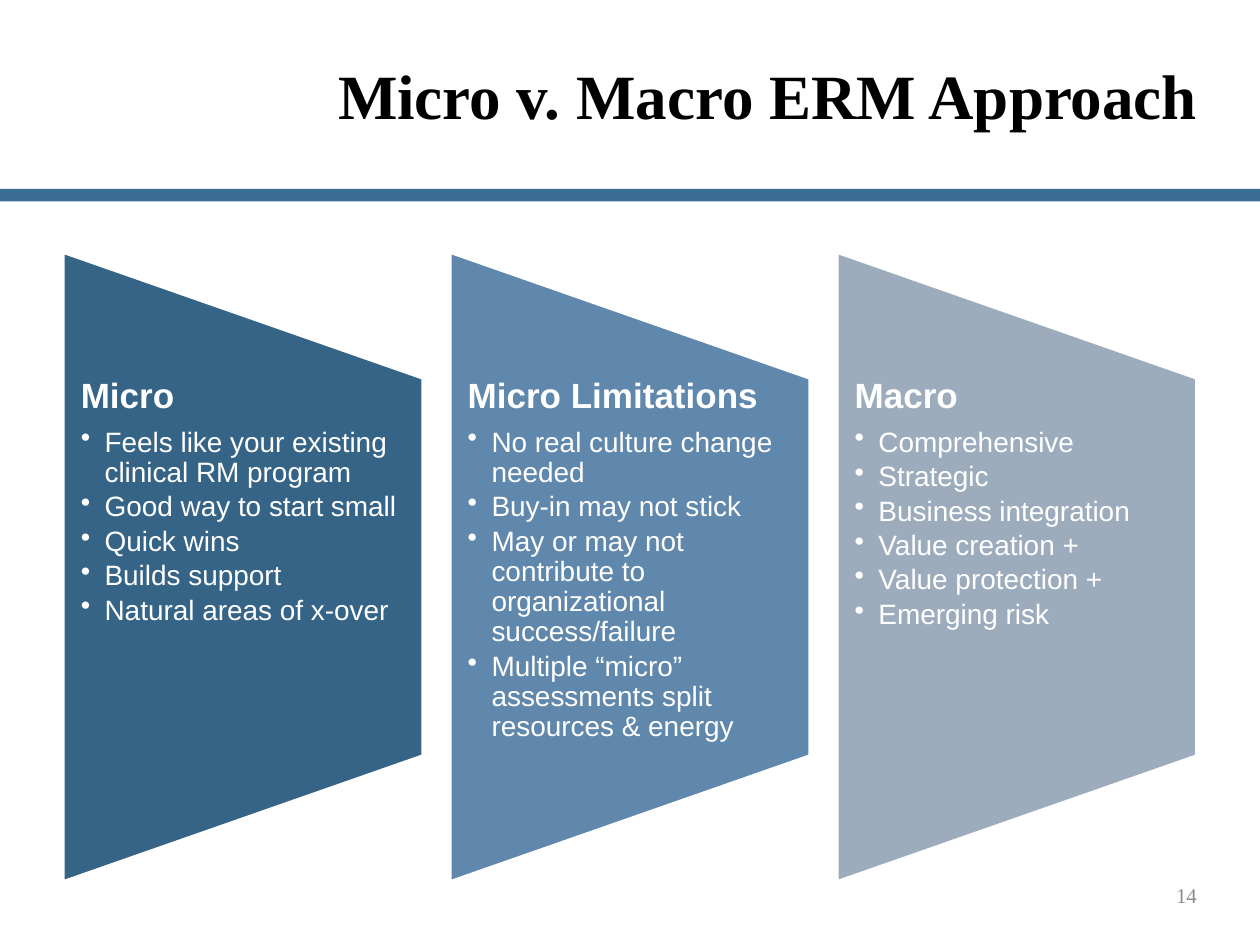
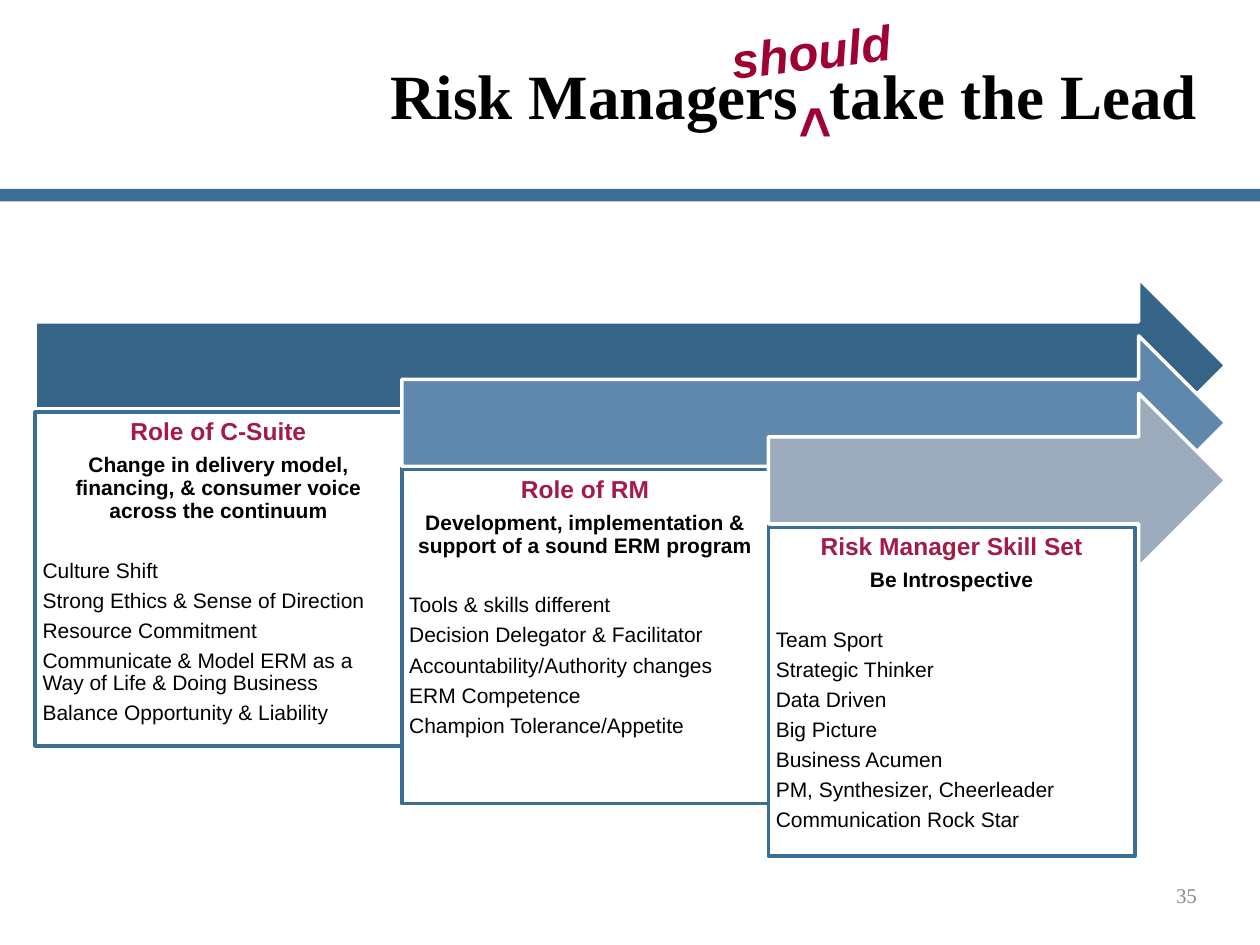
from lxml.etree import SubElement
from pptx import Presentation
from pptx.dml.color import RGBColor
from pptx.enum.shapes import MSO_SHAPE
from pptx.enum.text import MSO_ANCHOR, MSO_AUTO_SIZE, PP_ALIGN
from pptx.oxml.ns import qn
from pptx.util import Cm, Pt

BLUE = RGBColor(0x3B, 0x6E, 0x95)
SERIES = (
    RGBColor(0x36, 0x64, 0x87),
    RGBColor(0x60, 0x87, 0xAC),
    RGBColor(0x9D, 0xAC, 0xBD),
)
WHITE = RGBColor(0xFF, 0xFF, 0xFF)
BLACK = RGBColor(0, 0, 0)
GREY = RGBColor(0x8C, 0x8C, 0x8C)
RED = RGBColor(0xA2, 0x1C, 0x45)
CRIMSON = RGBColor(0xA0, 0x01, 0x33)
SANS = "Arial"
SERIF = "Times New Roman"

APPROACHES = [
    ("Micro", [
        "Feels like your existing clinical RM program",
        "Good way to start small",
        "Quick wins",
        "Builds support",
        "Natural areas of x-over",
    ]),
    ("Micro Limitations", [
        "No real culture change needed",
        "Buy-in may not stick",
        "May or may not contribute to organizational success/failure",
        "Multiple “micro” assessments split resources & energy",
    ]),
    ("Macro", [
        "Comprehensive",
        "Strategic",
        "Business integration",
        "Value creation +",
        "Value protection +",
        "Emerging risk",
    ]),
]

ROLES = [
    ("Role of C-Suite",
     "Change in delivery model, financing, & consumer voice across the continuum",
     6.73, [
         "Culture Shift",
         "Strong Ethics & Sense of Direction",
         "Resource Commitment",
         "Communicate & Model ERM as a Way of Life & Doing Business",
         "Balance Opportunity & Liability",
     ]),
    ("Role of RM",
     "Development, implementation & support of a sound ERM program",
     6.73, [
         "Tools & skills different",
         "Decision Delegator & Facilitator",
         "Accountability/Authority changes",
         "ERM Competence",
         "Champion Tolerance/Appetite",
     ]),
    ("Risk Manager Skill Set", "Be Introspective", 6.63, [
        "Team Sport",
        "Strategic Thinker",
        "Data Driven",
        "Big Picture",
        "Business Acumen",
        "PM, Synthesizer, Cheerleader",
        "Communication Rock Star",
    ]),
]


def write(p, text, size=12, color=BLACK, font=SANS, bold=False, italic=False,
          align=PP_ALIGN.LEFT, line=None, after=0, bullet=False, tracking=0):
    p.alignment = align
    p.space_before = Pt(0)
    p.space_after = Pt(after)
    if line:
        p.line_spacing = line
    if bullet:
        pPr = p._p.get_or_add_pPr()
        pPr.set("marL", str(Cm(0.48)))
        pPr.set("indent", str(Cm(-0.48)))
        SubElement(pPr, qn("a:buChar")).set("char", "•")
    r = p.add_run()
    r.text = text
    r.font.name = font
    r.font.size = Pt(size)
    r.font.bold = bold
    r.font.italic = italic
    r.font.color.rgb = color
    if tracking:
        r._r.get_or_add_rPr().set("spc", str(tracking * 100))


class Deck:
    def __init__(self):
        self.prs = Presentation()
        self.prs.slide_width = Cm(25.4)
        self.prs.slide_height = Cm(19.05)
        self.slide = None

    def new_slide(self, number):
        self.slide = self.prs.slides.add_slide(self.prs.slide_layouts[5])
        self.shape(MSO_SHAPE.RECTANGLE, 0, 3.81, 25.4, 0.25, BLUE)
        tf = self.text_box(21.84, 17.53, 2.54, 1.02, anchor=MSO_ANCHOR.MIDDLE)
        write(tf.paragraphs[0], number, color=GREY, font=SERIF, align=PP_ALIGN.RIGHT)

    def title(self, *parts):
        sp = self.slide.shapes.title
        sp.left, sp.top, sp.width, sp.height = Cm(6.1), Cm(0.64), Cm(18.29), Cm(2.54)
        tf = sp.text_frame
        tf.auto_size = MSO_AUTO_SIZE.NONE
        tf.vertical_anchor = MSO_ANCHOR.MIDDLE
        style = dict(size=36, font=SERIF, bold=True, align=PP_ALIGN.RIGHT)
        for i, part in enumerate(parts):
            if i:
                write(tf.paragraphs[0], " ", tracking=9, **style)
            write(tf.paragraphs[0], part, **style)

    def shape(self, kind, x, y, w, h, fill, line=None, rotation=0):
        sp = self.slide.shapes.add_shape(kind, Cm(x), Cm(y), Cm(w), Cm(h))
        sp.shadow.inherit = False
        sp.rotation = rotation
        sp.fill.solid()
        sp.fill.fore_color.rgb = fill
        if line is None:
            sp.line.fill.background()
        else:
            sp.line.color.rgb = line
            sp.line.width = Pt(2)
        return sp

    def text_box(self, x, y, w, h, anchor=MSO_ANCHOR.TOP, rotation=0):
        sp = self.slide.shapes.add_textbox(Cm(x), Cm(y), Cm(w), Cm(h))
        sp.rotation = rotation
        tf = sp.text_frame
        tf.word_wrap = True
        tf.vertical_anchor = anchor
        return tf

    def insets(self, tf, side, end):
        tf.margin_left = tf.margin_right = Cm(side)
        tf.margin_top = tf.margin_bottom = Cm(end)

    def approach(self, x, color, heading, points):
        w, length, middle = 7.26, 12.7, 11.43
        self.shape(MSO_SHAPE.FLOWCHART_MANUAL_OPERATION, x + (w - length) / 2,
                   middle - w / 2, length, w, color, WHITE, rotation=270)
        tf = self.text_box(x, 7.62, w, 7.62)
        self.insets(tf, 0.36, 0)
        write(tf.paragraphs[0], heading, size=20, color=WHITE, bold=True,
              line=0.9, after=7)
        for point in points:
            write(tf.add_paragraph(), point, size=16, color=WHITE, line=0.9,
                  after=2.4, bullet=True)

    def role(self, x, drop, color, heading, summary, height, points):
        self.shape(MSO_SHAPE.RIGHT_ARROW, x, 5.61 + drop, 24.71 - x, 3.51, color, WHITE)
        sp = self.shape(MSO_SHAPE.RECTANGLE, x, 8.31 + drop, 7.39, height, WHITE, BLUE)
        tf = sp.text_frame
        tf.word_wrap = True
        tf.vertical_anchor = MSO_ANCHOR.TOP
        self.insets(tf, 0.15, 0.15)
        head = dict(bold=True, align=PP_ALIGN.CENTER, line=0.9)
        write(tf.paragraphs[0], heading, size=14, color=RED, after=4.9, **head)
        write(tf.add_paragraph(), summary, after=21.3, **head)
        for point in points:
            write(tf.add_paragraph(), point, line=0.9, after=4.2)

    def insertion(self, text, x, y, w, h, size, rotation, **fmt):
        tf = self.text_box(x, y, w, h, MSO_ANCHOR.MIDDLE, rotation)
        write(tf.paragraphs[0], text, size=size, color=CRIMSON, bold=True, **fmt)


def main():
    deck = Deck()

    deck.new_slide("14")
    deck.title("Micro v. Macro ERM Approach")
    for i, (color, approach) in enumerate(zip(SERIES, APPROACHES)):
        deck.approach(1.27 + 7.8 * i, color, *approach)

    deck.new_slide("35")
    for i, (color, role) in enumerate(zip(SERIES, ROLES)):
        deck.role(0.71 + 7.39 * i, 1.16 * i, color, *role)
    deck.title("Risk Managers", "take the Lead")
    deck.insertion("<", 16, 2.03, 1.02, 0.76, 32, 90, align=PP_ALIGN.RIGHT)
    deck.insertion("should", 14.48, 0.38, 3.81, 1.27, 28, 352.9, italic=True)

    deck.prs.save("out.pptx")


if __name__ == "__main__":
    main()
